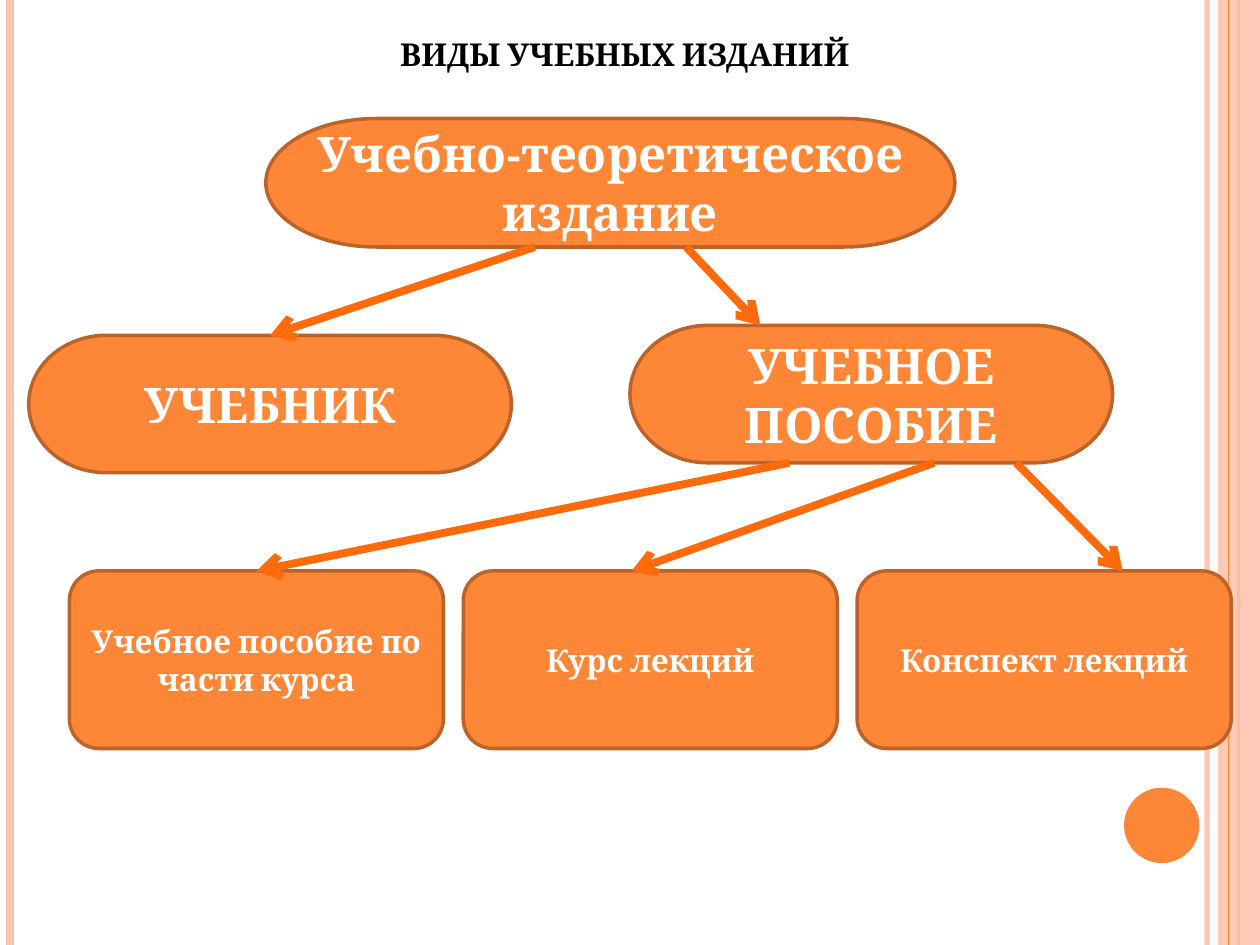
from dataclasses import dataclass

from lxml import etree
from pptx import Presentation
from pptx.dml.color import RGBColor
from pptx.enum import shapes, text
from pptx.oxml.ns import qn
from pptx.util import Cm, Pt


@dataclass(frozen=True)
class Theme:
    font: str = "Cambria"
    orange: str = "FE8637"
    outline: str = "BC6329"
    arrow: str = "FF6B0A"
    peach: str = "FEC3AE"
    white: str = "FFFFFF"
    black: str = "000000"
    large: int = 28
    small: int = 18


@dataclass(frozen=True)
class Box:
    left: float
    top: float
    width: float
    height: float

    @property
    def bottom(self):
        return self.top + self.height

    def across(self, share):
        return self.left + self.width * share

    def lengths(self):
        return [Cm(side) for side in (self.left, self.top, self.width, self.height)]


THEME = Theme()
TERMINATOR = shapes.MSO_SHAPE.FLOWCHART_TERMINATOR
ROUNDED = shapes.MSO_SHAPE.FLOWCHART_ALTERNATE_PROCESS


def set_alpha(fill_owner, percent):
    color = next(fill_owner.iter(qn("a:srgbClr")))
    etree.SubElement(color, qn("a:alpha")).set("val", str(percent * 1000))


def add_line(slide, start, end, color, width, alpha=None, arrow=False):
    line = slide.shapes.add_connector(
        shapes.MSO_CONNECTOR.STRAIGHT, *[Cm(value) for value in (*start, *end)])
    line.line.color.rgb = RGBColor.from_string(color)
    line.line.width = Pt(width)
    properties = line._element.spPr
    if alpha:
        set_alpha(properties, alpha)
    if arrow:
        etree.SubElement(properties.find(qn("a:ln")), qn("a:tailEnd")).set("type", "arrow")
    etree.SubElement(properties, qn("a:effectLst"))


def add_filled(slide, preset, box, color, outline=None):
    shape = slide.shapes.add_shape(preset, *box.lengths())
    shape.shadow.inherit = False
    shape.fill.solid()
    shape.fill.fore_color.rgb = RGBColor.from_string(color)
    if outline:
        shape.line.color.rgb = RGBColor.from_string(outline)
        shape.line.width = Pt(2)
    else:
        shape.line.fill.background()
    return shape


def write(shape, wording, size, color):
    frame = shape.text_frame
    frame.word_wrap = True
    frame.text = wording
    paragraph = frame.paragraphs[0]
    paragraph.alignment = text.PP_ALIGN.CENTER
    font = paragraph.runs[0].font
    font.name = THEME.font
    font.size = Pt(size)
    font.bold = True
    font.color.rgb = RGBColor.from_string(color)


def add_node(slide, preset, box, wording, size):
    node = add_filled(slide, preset, box, THEME.orange, THEME.outline)
    node.text_frame.vertical_anchor = text.MSO_ANCHOR.MIDDLE
    write(node, wording, size, THEME.white)


def link(slide, parent, leave, child, arrive):
    add_line(slide, (parent.across(leave), parent.bottom),
             (child.across(arrive), child.top), THEME.arrow, 4.5, arrow=True)


def draw_frame(slide, page):
    def stripe(x, color, width, alpha=None):
        add_line(slide, (page.left + x, page.top), (page.left + x, page.bottom),
                 color, width, alpha)

    stripe(24.33, THEME.peach, 3, 93)
    stripe(0.21, THEME.peach, 4.5)
    stripe(24.97, THEME.orange, 1.5)
    band_left = page.left + 24.55
    band = add_filled(slide, shapes.MSO_SHAPE.RECTANGLE,
                      Box(band_left, page.top, page.width - 24.55, page.height), THEME.peach)
    set_alpha(band._element.spPr, 87)
    stripe(24.77, THEME.orange, 0.75)
    add_filled(slide, shapes.MSO_SHAPE.OVAL,
               Box(page.left + 22.66, page.top + 15.88, 1.52, 1.52), THEME.orange)


def draw_title(slide, box):
    title = slide.shapes.add_textbox(*box.lengths())
    write(title, "ВИДЫ УЧЕБНЫХ ИЗДАНИЙ", THEME.small, THEME.black)


def draw_tree(slide, area):
    def place(x, y, width, height):
        return Box(area.left + x, area.top + y, width, height)

    theory = place(4.78, 0, 13.89, 2.59)
    textbook = place(0, 4.37, 9.73, 2.77)
    manual = place(12.12, 4.17, 9.73, 2.77)
    leaf_width, leaf_gap, leaf_left = 7.54, 0.4, 0.82
    leaves = [place(leaf_left + i * (leaf_width + leaf_gap), 9.12, leaf_width, 3.58)
              for i in range(3)]

    for box, wording in ((theory, "Учебно-теоретическое издание"),
                         (textbook, "УЧЕБНИК"),
                         (manual, "УЧЕБНОЕ ПОСОБИЕ")):
        add_node(slide, TERMINATOR, box, wording, THEME.large)
    kinds = ("Учебное пособие по части курса", "Курс лекций", "Конспект лекций")
    for box, wording in zip(leaves, kinds):
        add_node(slide, ROUNDED, box, wording, THEME.small)

    for leaf, leave, arrive in zip(leaves, (0.33, 0.63, 0.8), (0.5, 0.45, 0.71)):
        link(slide, manual, leave, leaf, arrive)
    link(slide, theory, 0.61, manual, 0.27)
    link(slide, theory, 0.39, textbook, 0.5)


def main():
    deck = Presentation()
    page = Box(0, 0, 25.4, 19.05)
    deck.slide_width, deck.slide_height = Cm(page.width), Cm(page.height)
    slide = deck.slides.add_slide(deck.slide_layouts[6])
    draw_frame(slide, page)
    draw_title(slide, Box(4.37, 0.58, 16.46, 1.02))
    draw_tree(slide, Box(0.58, 2.39, 24.24, 12.7))
    deck.save("out.pptx")


if __name__ == "__main__":
    main()
